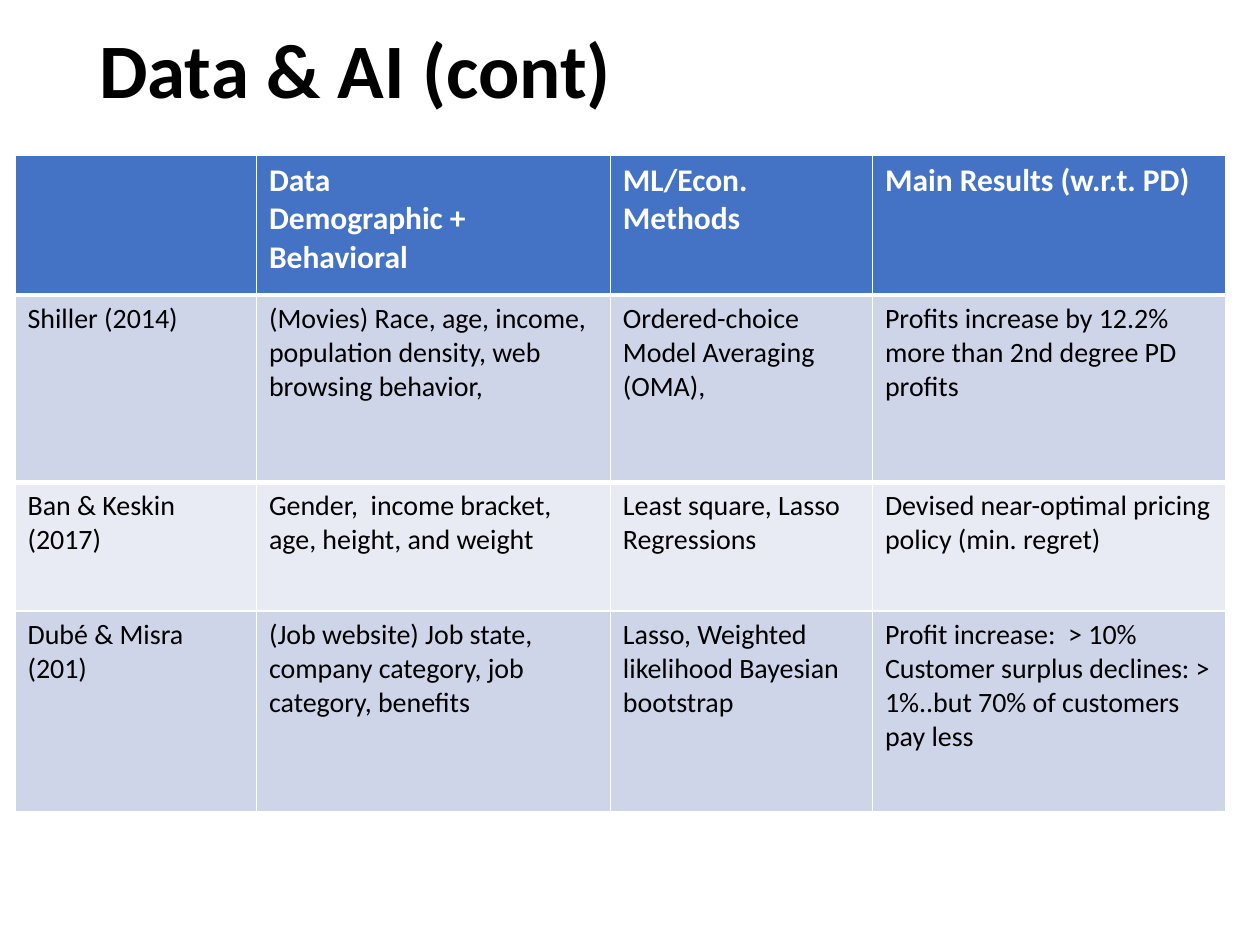
from lxml import etree
from pptx import Presentation
from pptx.dml.color import RGBColor
from pptx.enum.text import MSO_ANCHOR, PP_ALIGN
from pptx.oxml.ns import qn
from pptx.util import Pt

LEFT = PP_ALIGN.LEFT
TOP, MIDDLE = MSO_ANCHOR.TOP, MSO_ANCHOR.MIDDLE
TITLE_ONLY = 5
FONT = "Calibri"
COLORS = {
    "header": "4472C4",
    "odd_row": "CFD5E9",
    "even_row": "E8EBF4",
    "header_text": "FFFFFF",
    "text": "000000",
    "border": "FFFFFF",
}
COLUMN_WIDTHS = [138, 202.2, 149.8, 201.8]
ROW_HEIGHTS = [80, 107.2, 73.5, 114.5]
STUDIES = [
    ["", "Data\nDemographic + Behavioral", "ML/Econ. Methods",
     "Main Results (w.r.t. PD)"],
    ["Shiller (2014)",
     "(Movies) Race, age, income, population density, web browsing behavior,",
     "Ordered-choice Model Averaging (OMA),",
     "Profits increase by 12.2% more than 2nd degree PD profits"],
    ["Ban & Keskin (2017)",
     "Gender,  income bracket, age, height, and weight",
     "Least square, Lasso Regressions",
     "Devised near-optimal pricing policy (min. regret)"],
    ["Dubé & Misra (201)",
     "(Job website) Job state, company category, job category, benefits",
     "Lasso, Weighted likelihood Bayesian bootstrap",
     "Profit increase:  > 10%\n"
     "Customer surplus declines: > 1%..but 70% of customers pay less"],
]


def color(name):
    return RGBColor.from_string(COLORS[name])


def format_paragraph(paragraph, size, color_name, bold):
    paragraph.alignment = LEFT
    for run in paragraph.runs:
        run.font.name = FONT
        run.font.size = Pt(size)
        run.font.bold = bold
        run.font.color.rgb = color(color_name)


def place_title(slide, text, left, top, width, height):
    title = slide.shapes.title
    title.left, title.top = Pt(left), Pt(top)
    title.width, title.height = Pt(width), Pt(height)
    title.text_frame.text = text
    title.text_frame.vertical_anchor = MIDDLE
    paragraph = title.text_frame.paragraphs[0]
    paragraph.line_spacing = 0.9
    format_paragraph(paragraph, 44, "text", True)


def set_border(cell, side, width):
    """Draw one cell edge; side is the line's tag, such as a:lnB."""
    properties = cell._tc.get_or_add_tcPr()
    line = etree.Element(qn(side), w=str(Pt(width)))
    fill = etree.SubElement(line, qn("a:solidFill"))
    etree.SubElement(fill, qn("a:srgbClr"), val=COLORS["border"])
    properties.insert(0, line)


def fill_cell(cell, text, row_index):
    is_header = row_index == 0
    band = "odd_row" if row_index % 2 else "even_row"
    cell.fill.solid()
    cell.fill.fore_color.rgb = color("header" if is_header else band)
    cell.vertical_anchor = TOP
    cell.text_frame.text = text
    for paragraph in cell.text_frame.paragraphs:
        if is_header:
            format_paragraph(paragraph, 18, "header_text", True)
        else:
            format_paragraph(paragraph, 16, "text", False)


def add_studies_table(slide, left, top):
    """Add the table; its thin white borders come from the default style."""
    table = slide.shapes.add_table(
        len(ROW_HEIGHTS), len(COLUMN_WIDTHS), Pt(left), Pt(top),
        Pt(sum(COLUMN_WIDTHS)), Pt(sum(ROW_HEIGHTS))).table
    for column, width in zip(table.columns, COLUMN_WIDTHS):
        column.width = Pt(width)
    for row_index, (row, texts) in enumerate(zip(table.rows, STUDIES)):
        row.height = Pt(ROW_HEIGHTS[row_index])
        for cell, text in zip(row.cells, texts):
            fill_cell(cell, text, row_index)
    for column_index in range(len(COLUMN_WIDTHS)):
        set_border(table.cell(0, column_index), "a:lnB", 3)
        set_border(table.cell(1, column_index), "a:lnT", 3)


def main():
    presentation = Presentation()
    presentation.slide_width, presentation.slide_height = Pt(720), Pt(540)
    slide = presentation.slides.add_slide(
        presentation.slide_layouts[TITLE_ONLY])
    place_title(slide, "Data & AI (cont)", 49.5, -10, 621, 104.4)
    add_studies_table(slide, 8.6, 88.6)
    presentation.save("out.pptx")


if __name__ == "__main__":
    main()
